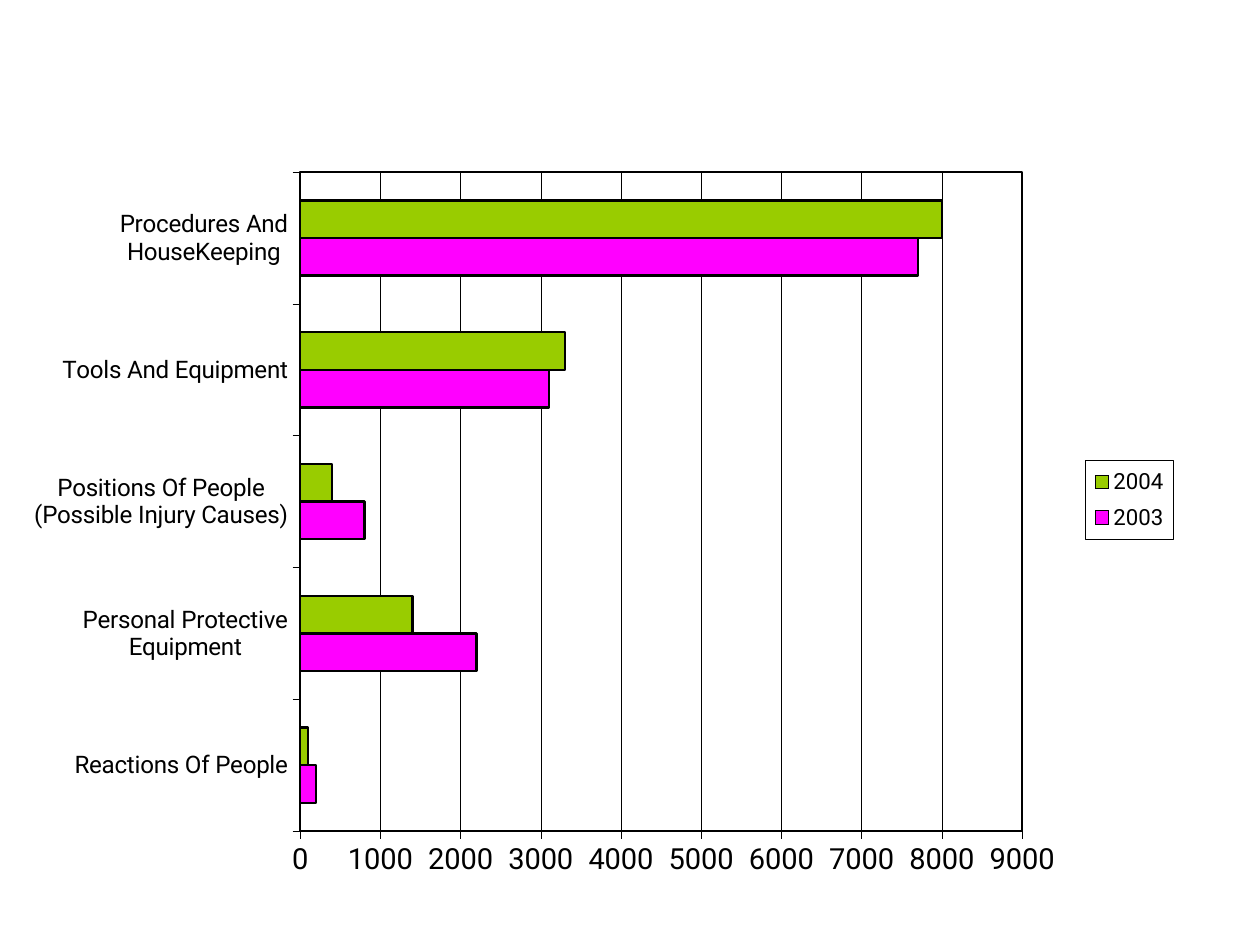
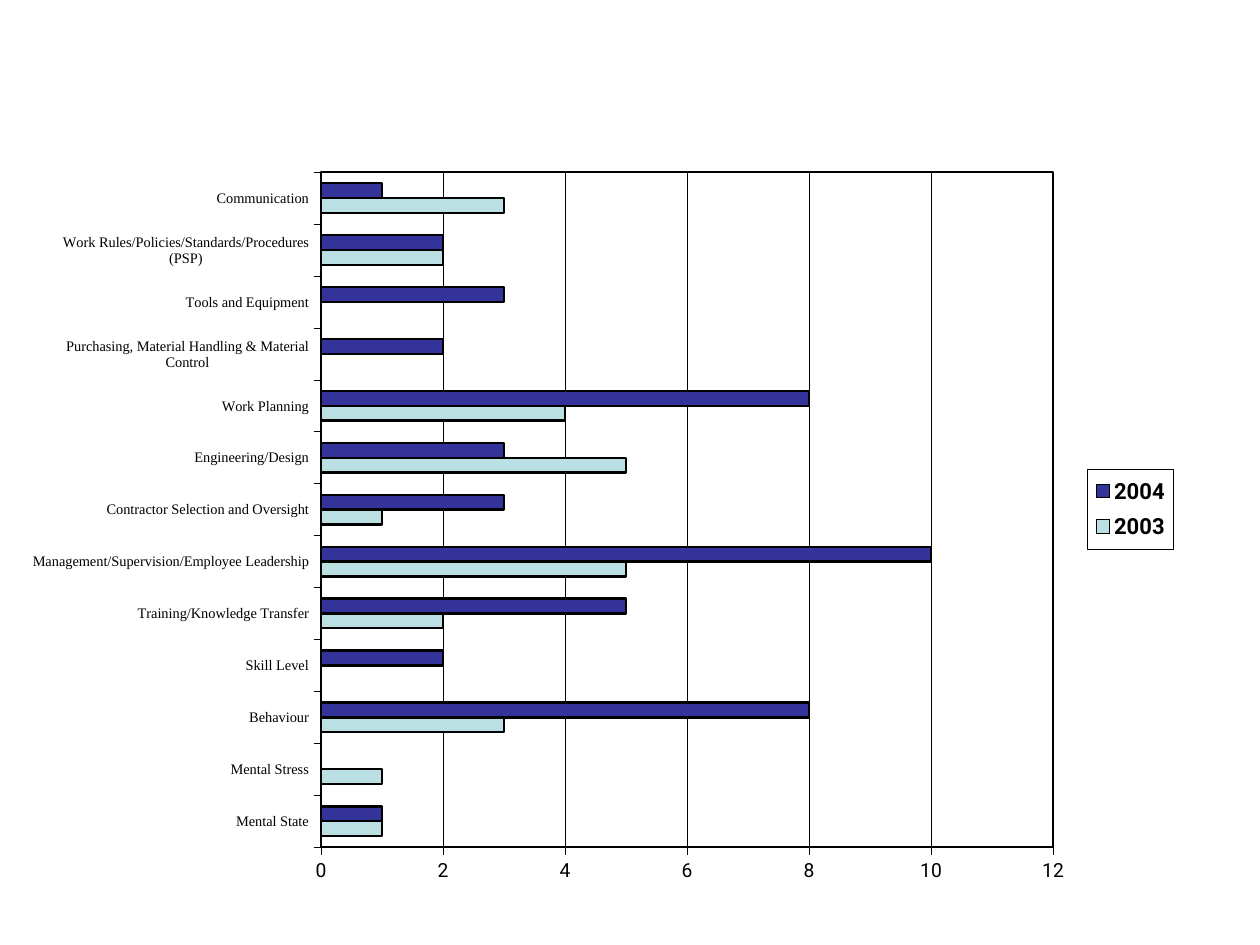
from dataclasses import dataclass

from lxml import etree
from pptx import Presentation
from pptx.chart.data import CategoryChartData
from pptx.dml.color import RGBColor
from pptx.enum.chart import XL_CHART_TYPE as ChartType
from pptx.enum.chart import XL_LEGEND_POSITION as LegendPosition
from pptx.enum.chart import XL_TICK_MARK as TickMark
from pptx.oxml import parse_xml
from pptx.oxml.ns import nsdecls, qn
from pptx.util import Inches, Pt


@dataclass(frozen=True)
class Theme:
    ink: str = "000000"
    sans: str = "Roboto"
    serif: str = "Times New Roman"
    base_size: float = 24.9
    legend_size: float = 12.7
    hairline: float = 0.35
    outline: float = 1.38


theme = Theme()


def style_font(font, size, name=theme.sans, bold=False):
    font.size = Pt(size)
    font.name = name
    font.bold = bold
    font.color.rgb = RGBColor.from_string(theme.ink)


def frame(element, box, line_width, layout_index, target=""):
    """Give a chart part a fixed place (fractions of the chart) and an outline."""
    for old_layout in element.findall(qn("c:layout")):
        element.remove(old_layout)
    modes = "".join(f'<c:{side}Mode val="edge"/>' for side in "xy")
    sizes = "".join(f'<c:{side} val="{value}"/>' for side, value in zip("xywh", box))
    element.insert(layout_index, parse_xml(
        f"<c:layout {nsdecls('c')}><c:manualLayout>{target}{modes}{sizes}"
        "</c:manualLayout></c:layout>"))
    border = parse_xml(
        f"<c:spPr {nsdecls('c', 'a')}><a:noFill/><a:ln w=\"{Pt(line_width)}\"><a:solidFill>"
        f'<a:srgbClr val="{theme.ink}"/></a:solidFill></a:ln></c:spPr>')
    text_properties = element.find(qn("c:txPr"))
    if text_properties is None:
        element.append(border)
    else:
        text_properties.addprevious(border)


observations = {
    "categories": {
        "Reactions Of People": (200, 100),
        "Personal Protective Equipment": (2200, 1400),
        "Positions Of People (Possible Injury Causes)": (800, 400),
        "Tools And Equipment": (3100, 3300),
        "Procedures And HouseKeeping": (7700, 8000),
    },
    "colors": ("FF00FF", "99CC00"),
    "maximum": 9000, "step": 1000,
    "category_font": {"size": 13.8}, "value_font": {"size": 16.6},
    "legend_bold": False,
    "plot_box": (0.233, 0.026, 0.629, 0.866),
    "legend_box": (0.917, 0.404, 0.077, 0.105),
}
root_causes = {
    "categories": {
        "Mental State": (1, 1),
        "Mental Stress": (1, 0),
        "Behaviour": (3, 8),
        "Skill Level": (0, 2),
        "Training/Knowledge Transfer": (2, 5),
        "Management/Supervision/Employee Leadership": (5, 10),
        "Contractor Selection and Oversight": (1, 3),
        "Engineering/Design": (5, 3),
        "Work Planning": (4, 8),
        "Purchasing, Material Handling & Material Control": (0, 2),
        "Tools and Equipment": (0, 3),
        "Work Rules/Policies/Standards/Procedures (PSP)": (2, 2),
        "Communication": (3, 1),
    },
    "colors": ("BBE0E3", "333399"),
    "maximum": 12, "step": 2,
    "category_font": {"size": 8.3, "name": theme.serif}, "value_font": {"size": 11.1},
    "legend_bold": True,
    "plot_box": (0.244, 0.026, 0.644, 0.887),
    "legend_box": (0.918, 0.416, 0.076, 0.105),
}

presentation = Presentation()
presentation.slide_width = Inches(10)
presentation.slide_height = Inches(7.5)
blank_layout = presentation.slide_layouts[6]

for content in (observations, root_causes):
    slide = presentation.slides.add_slide(blank_layout)
    chart_data = CategoryChartData()
    chart_data.categories = list(content["categories"])
    for year, values in zip(("2003", "2004"), zip(*content["categories"].values())):
        chart_data.add_series(year, values)
    chart = slide.shapes.add_chart(
        ChartType.BAR_CLUSTERED, Inches(0.26), Inches(1.21), Inches(9.11), Inches(6.04),
        chart_data).chart
    chart.has_title = False
    style_font(chart.font, theme.base_size, bold=True)

    plot = chart.plots[0]
    plot.gap_width = 150
    plot.overlap = 0
    plot.vary_by_categories = False
    for series, color in zip(plot.series, content["colors"]):
        series.format.fill.solid()
        series.format.fill.fore_color.rgb = RGBColor.from_string(color)
        series.format.line.color.rgb = RGBColor.from_string(theme.ink)
        series.format.line.width = Pt(theme.outline)

    value_axis = chart.value_axis
    value_axis.minimum_scale = 0
    value_axis.maximum_scale = content["maximum"]
    value_axis.major_unit = content["step"]
    value_axis.has_major_gridlines = True
    style_font(value_axis.tick_labels.font, **content["value_font"])
    style_font(chart.category_axis.tick_labels.font, **content["category_font"])
    for axis in (chart.category_axis, value_axis):
        axis.major_tick_mark = TickMark.OUTSIDE
        axis.minor_tick_mark = TickMark.NONE
    for lined in (chart.category_axis, value_axis, value_axis.major_gridlines):
        lined.format.line.color.rgb = RGBColor.from_string(theme.ink)
        lined.format.line.width = Pt(theme.hairline)

    chart.has_legend = True
    legend = chart.legend
    legend.position = LegendPosition.RIGHT
    legend.include_in_layout = False
    style_font(legend.font, theme.legend_size, bold=content["legend_bold"])

    chart_element = chart.element.find(qn("c:chart"))
    frame(chart_element.find(qn("c:plotArea")), content["plot_box"], theme.outline, 0,
          target='<c:layoutTarget val="inner"/>')
    frame(chart_element.find(qn("c:legend")), content["legend_box"], theme.hairline, 1)

presentation.save("out.pptx")
